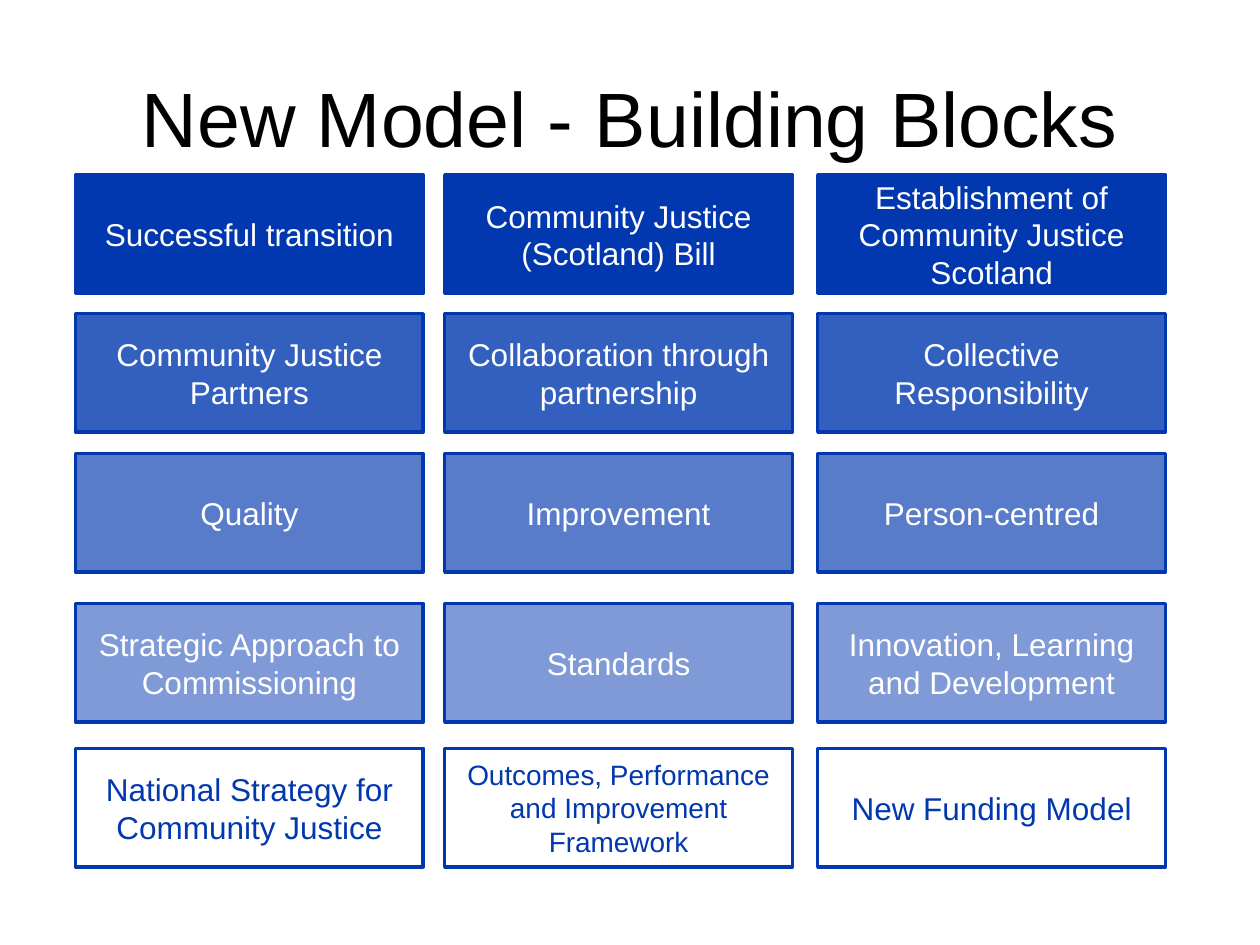
import pptx
import pptx.util
import pptx.dml.color
import pptx.enum.shapes
import pptx.enum.text
import lxml.etree
from pptx.util import Inches, Pt

BLUE = pptx.dml.color.RGBColor(0x01, 0x37, 0xAF)
WHITE = pptx.dml.color.RGBColor(0xFF, 0xFF, 0xFF)
BLACK = pptx.dml.color.RGBColor(0, 0, 0)
FONT = "Arial"

# Content: top of row, opacity of the blue fill in percent, labels
TITLE = "New Model - Building Blocks"
ROWS = [
    (1.39, 100, ["Successful transition",
                 "Community Justice (Scotland) Bill",
                 "Establishment of Community Justice Scotland"]),
    (2.49, 80, ["Community Justice Partners",
                "Collaboration through partnership",
                "Collective Responsibility"]),
    (3.6, 65, ["Quality", "Improvement", "Person-centred"]),
    (4.79, 50, ["Strategic Approach to Commissioning",
                "Standards",
                "Innovation, Learning and Development"]),
    (5.94, 0, ["National Strategy for Community Justice",
               "Outcomes, Performance and Improvement Framework",
               "New Funding Model"]),
]
LEFTS = [0.6, 3.53, 6.49]
WIDTH, HEIGHT = 2.76, 0.94
LONG = 45  # labels longer than this get the smaller size


def style(frame, text, size, color):
    frame.text = text
    frame.word_wrap = True
    frame.vertical_anchor = pptx.enum.text.MSO_ANCHOR.MIDDLE
    para = frame.paragraphs[0]
    para.alignment = pptx.enum.text.PP_ALIGN.CENTER
    para.font.name = FONT
    para.font.size = Pt(size)
    para.font.color.rgb = color


def add_block(slide, left, top, text, alpha):
    block = slide.shapes.add_shape(
        pptx.enum.shapes.MSO_SHAPE.RECTANGLE,
        Inches(left), Inches(top), Inches(WIDTH), Inches(HEIGHT))
    block.shadow.inherit = False
    block.line.color.rgb = BLUE
    block.line.width = Pt(2)
    block.fill.solid()
    block.fill.fore_color.rgb = BLUE if alpha else WHITE
    if 0 < alpha < 100:
        tint = block.fill._xPr.find(".//" + pptx.oxml.ns.qn("a:srgbClr"))
        lxml.etree.SubElement(tint, pptx.oxml.ns.qn("a:alpha"),
                              val=str(alpha * 1000))
    size = 16 if len(text) > LONG else 18
    style(block.text_frame, text, size, WHITE if alpha else BLUE)


def main():
    deck = pptx.Presentation()
    deck.slide_width, deck.slide_height = Inches(10), Inches(7.5)
    slide = deck.slides.add_slide(deck.slide_layouts[5])

    # Title
    title = slide.shapes.title
    title.left, title.top = Inches(0.5), Inches(0.3)
    title.width, title.height = Inches(9), Inches(1.25)
    style(title.text_frame, TITLE, 44, BLACK)

    # Grid of blocks, fading downwards
    for top, alpha, labels in ROWS:
        for left, text in zip(LEFTS, labels):
            add_block(slide, left, top, text, alpha)

    deck.save("out.pptx")


if __name__ == "__main__":
    main()
